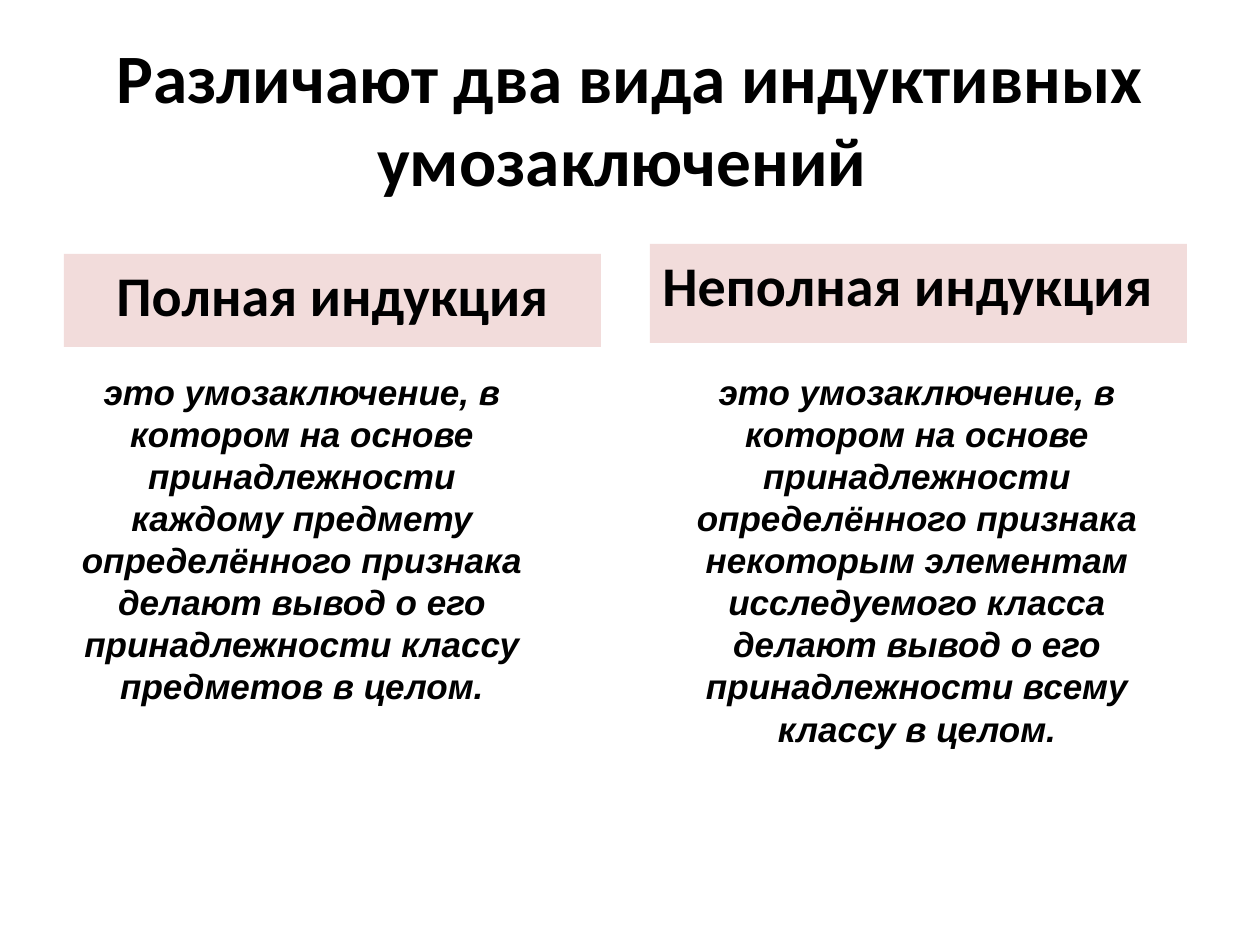
from dataclasses import dataclass
from typing import Any

from pptx import Presentation
from pptx.dml.color import RGBColor
from pptx.enum.shapes import MSO_SHAPE
from pptx.enum.text import MSO_ANCHOR, PP_ALIGN
from pptx.util import Emu, Pt

RECTANGLE = MSO_SHAPE.RECTANGLE
TOP, MIDDLE = MSO_ANCHOR.TOP, MSO_ANCHOR.MIDDLE
LEFT, CENTER = PP_ALIGN.LEFT, PP_ALIGN.CENTER
PX = 914400 // 126
COLORS = {"text": "000000", "heading": "F2DCDB"}

KINDS = [
    ("Полная индукция", (64, 254, 537, 93), CENTER,
     "это умозаключение, в котором на основе принадлежности каждому предмету "
     "определённого признака делают вывод о его принадлежности классу предметов в целом.",
     (64, 363, 476, 352)),
    ("Неполная индукция", (650, 244, 537, 99), LEFT,
     "это умозаключение, в котором на основе принадлежности определённого признака "
     "некоторым элементам исследуемого класса делают вывод о его принадлежности "
     "всему классу в целом.",
     (669, 363, 496, 394)),
]


@dataclass
class InductionSlide:
    """Draws titles, headings and definitions on one slide in a shared style."""

    page: Any
    heading_font: str = "Calibri"
    body_font: str = "Arial"

    def add_text(self, box, text, font, size, align=CENTER, anchor=MIDDLE, italic=False):
        frame = box.text_frame
        frame.word_wrap = True
        frame.vertical_anchor = anchor
        para = frame.paragraphs[0]
        para.alignment = align
        span = para.add_run()
        span.text = text
        span.font.name = font
        span.font.size = Pt(size)
        span.font.bold = True
        span.font.italic = italic
        span.font.color.rgb = RGBColor.from_string(COLORS["text"])

    def text_box(self, area):
        return self.page.shapes.add_textbox(*(Emu(side * PX) for side in area))

    def title(self, text, area):
        self.add_text(self.text_box(area), text, self.heading_font, 39.6)

    def heading(self, text, area, align):
        box = self.page.shapes.add_shape(RECTANGLE, *(Emu(side * PX) for side in area))
        box.shadow.inherit = False
        box.fill.solid()
        box.fill.fore_color.rgb = RGBColor.from_string(COLORS["heading"])
        box.line.fill.background()
        self.add_text(box, text, self.heading_font, 32, align, TOP)

    def definition(self, text, area):
        self.add_text(self.text_box(area), text, self.body_font, 20, italic=True)


def main():
    deck = Presentation()
    deck.slide_width, deck.slide_height = Emu(1260 * PX), Emu(945 * PX)
    slide = InductionSlide(deck.slides.add_slide(deck.slide_layouts[6]))
    slide.title("Различают два вида индуктивных умозаключений ", (63, 38, 1134, 158))
    for name, heading_area, align, meaning, meaning_area in KINDS:
        slide.heading(name, heading_area, align)
        slide.definition(meaning, meaning_area)
    deck.save("out.pptx")


if __name__ == "__main__":
    main()
